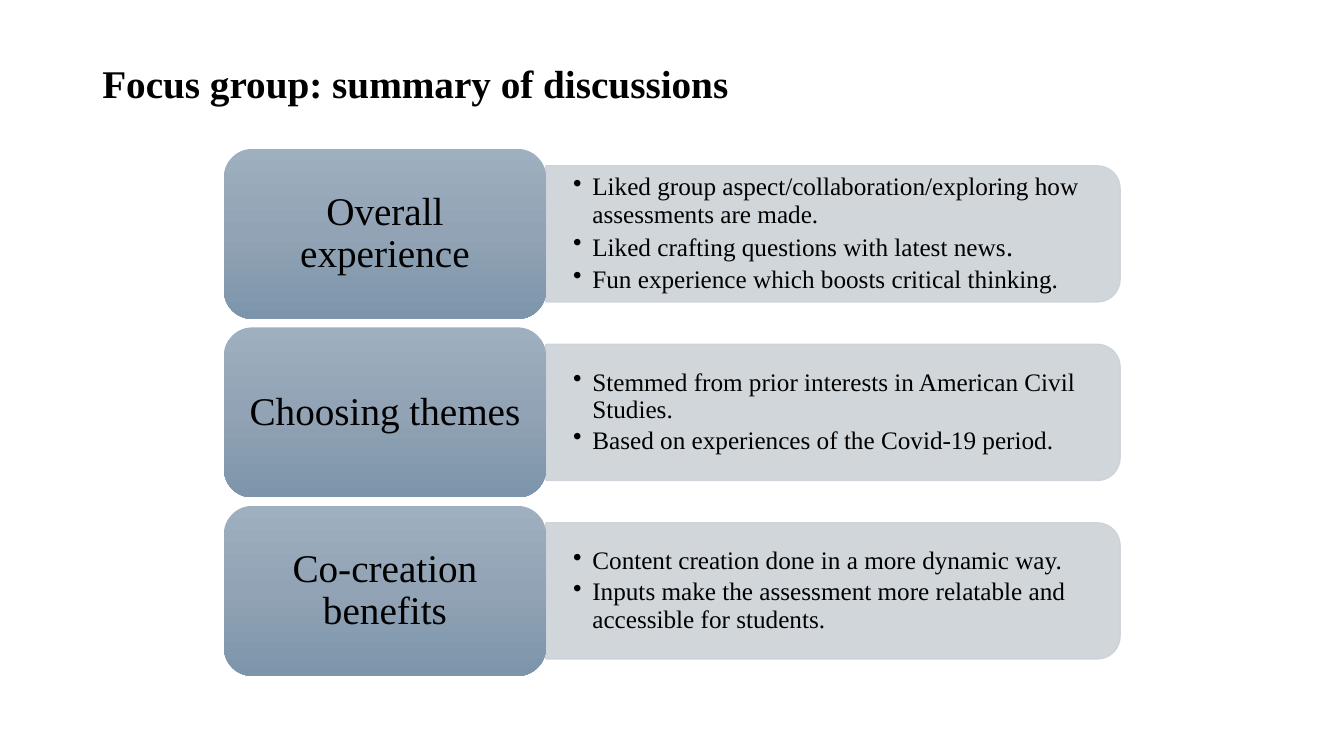
from copy import deepcopy

from lxml.etree import SubElement
from pptx import Presentation
from pptx.dml.color import RGBColor
from pptx.enum.shapes import MSO_SHAPE as Shape
from pptx.enum.text import MSO_ANCHOR as Anchor, PP_ALIGN as Align
from pptx.oxml.ns import qn
from pptx.util import Inches, Pt

COLUMNS, ROWS = 96, 54
LABEL_LEFT, LABEL_WIDTH, LABEL_HEIGHT = 16, 23, 12.15
PANEL_LEFT, PANEL_WIDTH, PANEL_HEIGHT = 39, 41, 9.72
NOTES_WIDTH, NOTES_HEIGHT = 40.5, 8.8
FIRST_MIDDLE, PITCH = 16.71, 12.75

TOPICS = [
    ("Overall experience", [
        ["Liked group aspect/collaboration/exploring how assessments are made."],
        ["Liked crafting questions with latest news", "."],
        ["Fun experience which boosts critical thinking."],
    ]),
    ("Choosing themes", [
        ["Stemmed from prior interests in American Civil Studies."],
        ["Based on experiences of the Covid-19 period."],
    ]),
    ("Co-creation benefits", [
        ["Content creation done in a more dynamic way."],
        ["Inputs make the assessment more relatable and accessible for students."],
    ]),
]


def color(value):
    return RGBColor.from_string(value)


class SlideBuilder:
    font = "Times New Roman"
    ink = "000000"
    panel_fill = "CCD2D8"
    label_stops = [(0, "9EAFBF"), (0.5, "91A3B4"), (1, "7C95AB")]
    heading_size, note_sizes = 28, (18, 20)

    def __init__(self, presentation):
        self.slide = presentation.slides.add_slide(presentation.slide_layouts[6])
        self.column = presentation.slide_width / COLUMNS
        self.row = presentation.slide_height / ROWS

    def box(self, left, middle, width, height):
        top = middle - height / 2
        return (round(left * self.column), round(top * self.row),
                round(width * self.column), round(height * self.row))

    def frame(self, shape, side, edge):
        frame = shape.text_frame
        frame.word_wrap = True
        frame.vertical_anchor = Anchor.MIDDLE
        frame.margin_left = frame.margin_right = Inches(side)
        frame.margin_top = frame.margin_bottom = Inches(edge)
        return frame

    def format(self, paragraph, sizes, align=Align.LEFT, bold=False):
        paragraph.alignment = align
        paragraph.line_spacing = 0.9
        for run, size in zip(paragraph.runs, sizes):
            run.font.name = self.font
            run.font.size = Pt(size)
            run.font.bold = bold
            run.font.color.rgb = color(self.ink)

    def title(self, text):
        shape = self.slide.shapes.add_textbox(*self.box(6.6, 6.16, 82.8, 6.55))
        frame = self.frame(shape, 0.1, 0.05)
        frame.text = text
        self.format(frame.paragraphs[0], [self.heading_size], bold=True)

    def panel(self, middle):
        left = PANEL_LEFT + (PANEL_WIDTH - PANEL_HEIGHT) / 2
        shape = self.slide.shapes.add_shape(
            Shape.ROUND_2_SAME_RECTANGLE,
            *self.box(left, middle, PANEL_HEIGHT, PANEL_WIDTH))
        shape.rotation = 90
        shape.shadow.inherit = False
        shape.fill.solid()
        shape.line.width = Pt(1)
        for fill in (shape.fill, shape.line.fill):
            fill.solid()
            fill.fore_color.rgb = color(self.panel_fill)
        for element in shape.element.spPr.iter(qn("a:srgbClr")):
            SubElement(element, qn("a:alpha")).set("val", "90000")

    def notes(self, middle, items):
        shape = self.slide.shapes.add_textbox(
            *self.box(PANEL_LEFT, middle, NOTES_WIDTH, NOTES_HEIGHT))
        frame = self.frame(shape, 0.27, 0.14)
        for index, pieces in enumerate(items):
            paragraph = frame.add_paragraph() if index else frame.paragraphs[0]
            for piece in pieces:
                paragraph.add_run().text = piece
            self.format(paragraph, self.note_sizes)
            self.bullet(paragraph)

    def bullet(self, paragraph):
        paragraph.level = 1
        paragraph.space_after = Pt(2.7)
        properties = paragraph._p.get_or_add_pPr()
        properties.set("marL", str(Inches(0.19)))
        properties.set("indent", str(-Inches(0.19)))
        SubElement(properties, qn("a:buChar")).set("char", "•")

    def label(self, middle, text):
        shape = self.slide.shapes.add_shape(
            Shape.ROUNDED_RECTANGLE,
            *self.box(LABEL_LEFT, middle, LABEL_WIDTH, LABEL_HEIGHT))
        shape.shadow.inherit = False
        shape.line.fill.background()
        self.gradient(shape)
        frame = self.frame(shape, 0.12, 0.06)
        frame.text = text
        self.format(frame.paragraphs[0], [self.heading_size], Align.CENTER)

    def gradient(self, shape):
        shape.fill.gradient()
        shape.fill.gradient_angle = 270
        stops = shape.element.spPr.find(".//" + qn("a:gsLst"))
        stops.append(deepcopy(stops[0]))
        for stop, (position, value) in zip(shape.fill.gradient_stops, self.label_stops):
            stop.position = position
            stop.color.rgb = color(value)


def main():
    presentation = Presentation()
    presentation.slide_width = Inches(13.33)
    presentation.slide_height = Inches(7.5)
    builder = SlideBuilder(presentation)
    builder.title("Focus group: summary of discussions")
    for index, (heading, items) in enumerate(TOPICS):
        middle = FIRST_MIDDLE + index * PITCH
        builder.panel(middle)
        builder.notes(middle, items)
        builder.label(middle, heading)
    presentation.save("out.pptx")


if __name__ == "__main__":
    main()
